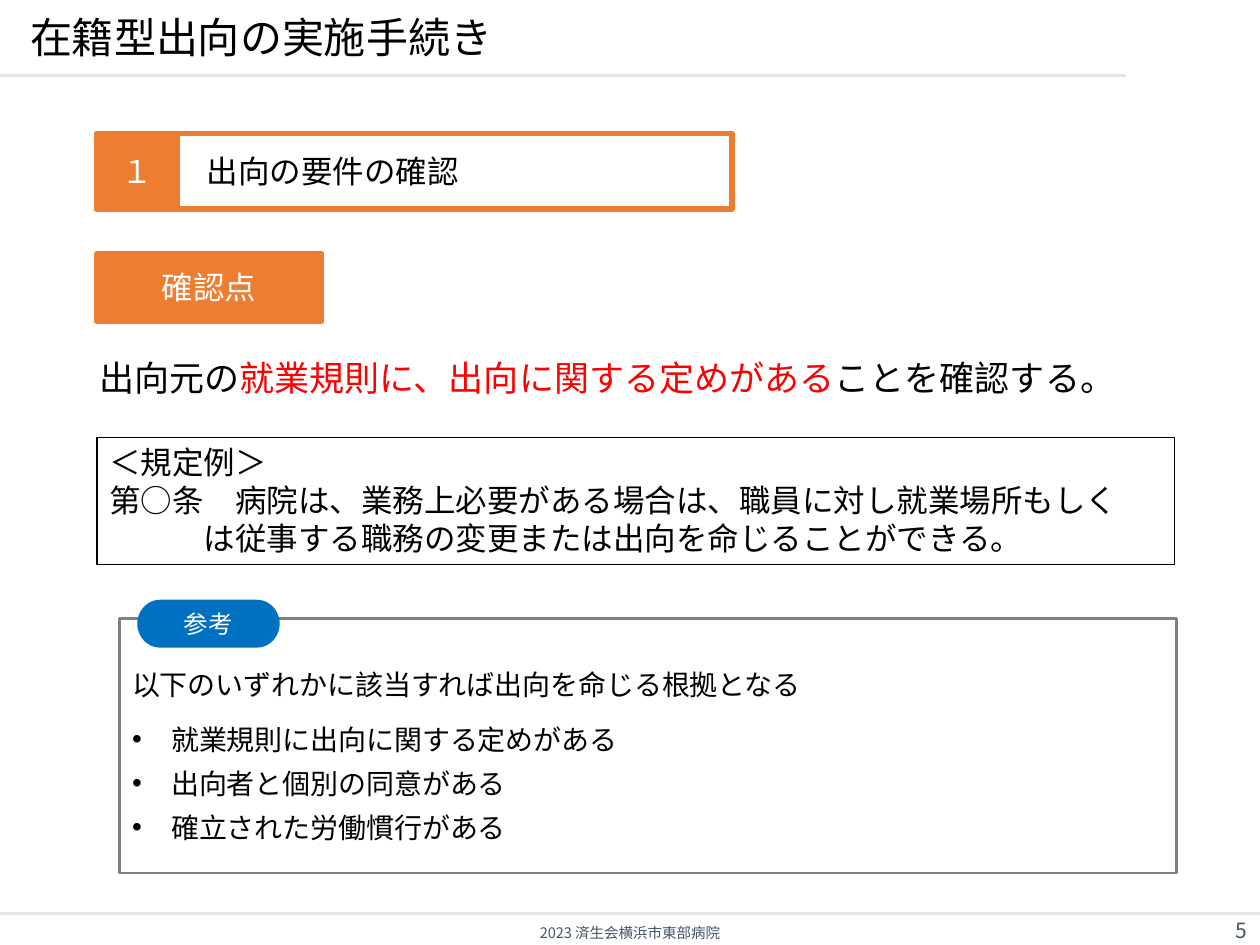
import lxml.etree
import pptx
import pptx.dml.color
import pptx.enum.shapes
import pptx.enum.text
import pptx.oxml.ns
import pptx.util
from pptx.util import Inches

THEME = {
    "font": "Noto Sans CJK JP", "body_font": "Calibri",
    "black": "000000", "white": "FFFFFF", "red": "FF0000", "orange": "ED7D31",
    "blue": "0070C0", "gray": "808080", "rule": "E7E6E6", "footer": "44546A",
    "title_size": 24, "lead_size": 20, "heading_size": 18, "list_size": 16,
    "tag_size": 14, "number_size": 12, "footer_size": 8.3,
}
ALIGN = pptx.enum.text.PP_ALIGN
ANCHOR = pptx.enum.text.MSO_ANCHOR
SHAPE = pptx.enum.shapes.MSO_SHAPE
qn = pptx.oxml.ns.qn


def rgb(name):
    return pptx.dml.color.RGBColor.from_string(THEME[name])


def add_box(box, lines, size, color="black", font="font", align=ALIGN.LEFT,
            anchor=ANCHOR.MIDDLE, insets=(0.1, 0.05, 0.1, 0.05), wrap=True,
            kind=None, fill=None, line=None, weight=0):
    """Add a text box, or a shape if a kind is given; a line is text or (text, color) runs."""
    place = [Inches(value) for value in box]
    if kind is None:
        shape = slide.shapes.add_textbox(*place)
    else:
        shape = slide.shapes.add_shape(kind, *place)
        shape.shadow.inherit = False
        if fill:
            shape.fill.solid()
            shape.fill.fore_color.rgb = rgb(fill)
        else:
            shape.fill.background()
        if line:
            shape.line.color.rgb = rgb(line)
            shape.line.width = pptx.util.Pt(weight)
        else:
            shape.line.fill.background()
    frame = shape.text_frame
    frame.word_wrap = wrap
    frame.vertical_anchor = anchor
    (frame.margin_left, frame.margin_top,
     frame.margin_right, frame.margin_bottom) = [Inches(value) for value in insets]
    for index, content in enumerate(lines):
        paragraph = frame.paragraphs[0] if index == 0 else frame.add_paragraph()
        paragraph.alignment = align
        for text, run_color in [(content, color)] if isinstance(content, str) else content:
            run = paragraph.add_run()
            run.text = text
            run.font.size = pptx.util.Pt(THEME[size])
            run.font.name = THEME[font]
            run.font.color.rgb = rgb(run_color)
            east_asian = lxml.etree.SubElement(run.font._element, qn("a:ea"))
            east_asian.set("typeface", THEME["font"])
    return shape


presentation = pptx.Presentation()
presentation.slide_width = Inches(10)
presentation.slide_height = Inches(7.5)
slide = presentation.slides.add_slide(presentation.slide_layouts[6])

# Header and footer rules
for left, right, top in [(0, 8.94, 0.6), (-0.03, 10, 7.25)]:
    rule = slide.shapes.add_connector(pptx.enum.shapes.MSO_CONNECTOR.STRAIGHT,
                                      Inches(left), Inches(top), Inches(right), Inches(top))
    rule.line.color.rgb = rgb("rule")
    rule.line.width = pptx.util.Pt(1.5)
    lxml.etree.SubElement(rule._element.spPr, qn("a:effectLst"))

# Footer, title and page number
add_box((0, 7.26, 10, 0.29), ["2023 済生会横浜市東部病院"], "footer_size", "footer",
        align=ALIGN.CENTER)
add_box((0.14, 0.11, 8.04, 0.38), ["在籍型出向の実施手続き"], "title_size",
        anchor=ANCHOR.BOTTOM, insets=(0.1, 0.05, 0.1, 0), wrap=False)
add_box((7.92, 7.26, 2.08, 0.25), ["5"], "number_size", "footer", align=ALIGN.RIGHT)

# Lead sentence
add_box((0.69, 2.83, 8.34, 0.34),
        [[("出向元の", "black"), ("就業規則に、出向に関する定めがある", "red"),
          ("ことを確認する。", "black")]],
        "lead_size", font="body_font", anchor=ANCHOR.TOP, insets=(0.1, 0, 0.1, 0), wrap=False)

# Sample clause, its last line set in by three characters
clause = add_box((0.77, 3.47, 8.55, 1.01),
                 ["＜規定例＞",
                  "第○条　病院は、業務上必要がある場合は、職員に対し就業場所もしく",
                  "は従事する職務の変更または出向を命じることができる。"],
                 "heading_size", font="body_font", anchor=ANCHOR.TOP,
                 kind=SHAPE.RECTANGLE, line="black", weight=0.75)
clause.text_frame.paragraphs[2]._p.get_or_add_pPr().set("marL", str(Inches(0.75)))

# Step heading, its number and the check label
add_box((0.77, 1.06, 5.04, 0.6), ["出向の要件の確認"], "heading_size",
        insets=(0.87, 0.05, 0.1, 0.05), kind=SHAPE.RECTANGLE,
        fill="white", line="orange", weight=3)
for box, label in [((0.77, 1.06, 0.64, 0.6), "１"), ((0.77, 2.01, 1.78, 0.54), "確認点")]:
    add_box(box, [label], "heading_size", "white", align=ALIGN.CENTER, insets=[0.04] * 4,
            kind=SHAPE.RECTANGLE, fill="orange", line="orange", weight=3)

# Reference panel with bullets
panel = add_box((0.95, 4.91, 8.39, 2.02),
                ["以下のいずれかに該当すれば出向を命じる根拠となる",
                 "就業規則に出向に関する定めがある",
                 "出向者と個別の同意がある",
                 "確立された労働慣行がある"],
                "list_size", font="body_font", anchor=ANCHOR.TOP, insets=(0.1, 0.39, 0.1, 0),
                kind=SHAPE.RECTANGLE, fill="white", line="gray", weight=1.5)
intro, *bullets = panel.text_frame.paragraphs
intro.space_after = pptx.util.Pt(12)
for paragraph in bullets:
    properties = paragraph._p.get_or_add_pPr()
    properties.set("marL", str(Inches(0.31)))
    properties.set("indent", str(Inches(-0.31)))
    lxml.etree.SubElement(properties, qn("a:buFont")).set("typeface", "Arial")
    lxml.etree.SubElement(properties, qn("a:buChar")).set("char", "•")
    paragraph.space_after = pptx.util.Pt(6)

# Reference tag
add_box((1.09, 4.76, 1.13, 0.38), ["参考"], "tag_size", "white", align=ALIGN.CENTER,
        insets=[0] * 4, kind=SHAPE.FLOWCHART_TERMINATOR, fill="blue")

presentation.save("out.pptx")
